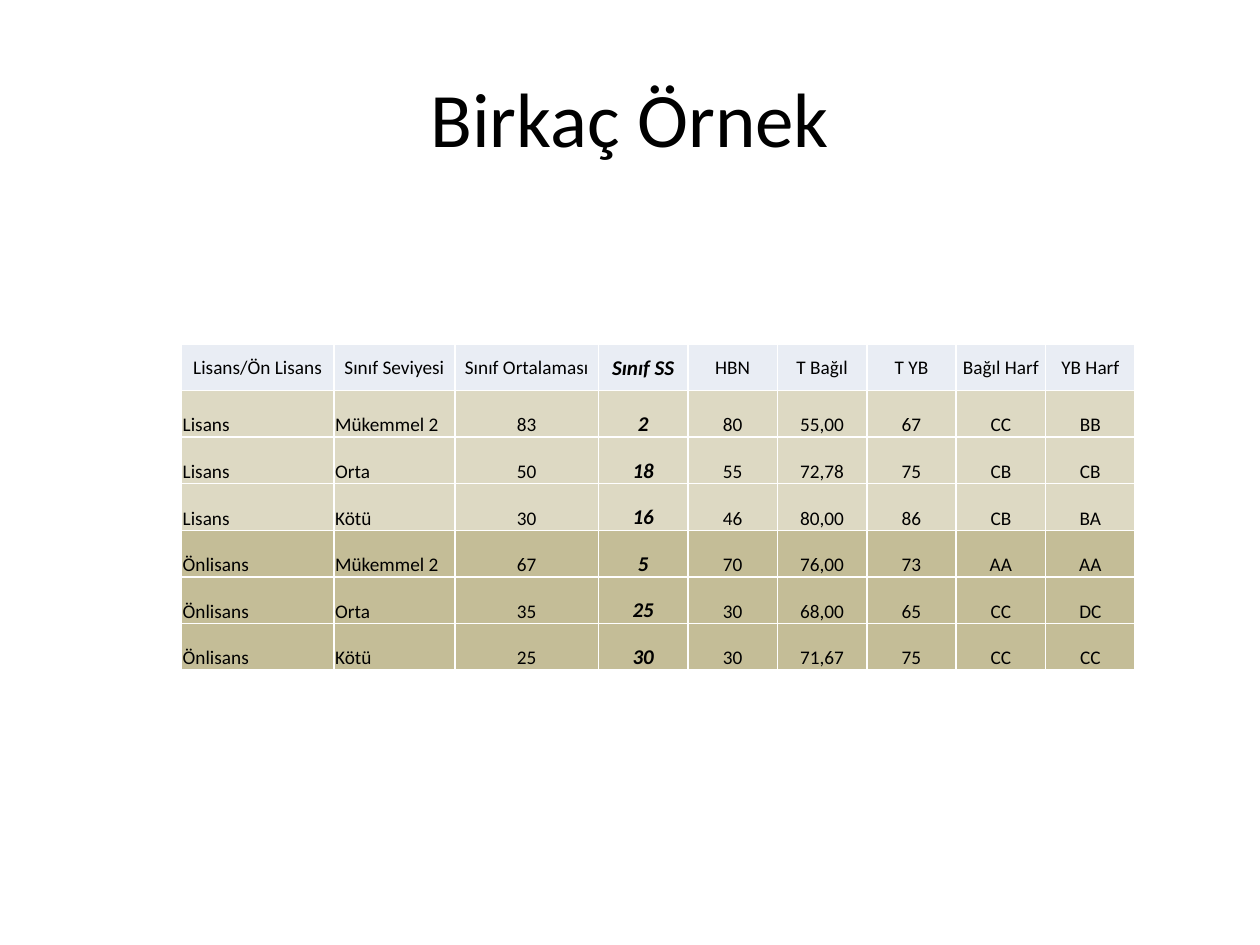
from lxml import etree
from pptx import Presentation
from pptx.dml.color import RGBColor
from pptx.enum.text import MSO_ANCHOR, PP_ALIGN
from pptx.oxml.ns import qn
from pptx.util import Inches, Pt

TITLE = "Birkaç Örnek"
HEADER = ["Lisans/Ön Lisans", "Sınıf Seviyesi", "Sınıf Ortalaması", "Sınıf SS",
          "HBN", "T Bağıl", "T YB", "Bağıl Harf", "YB Harf"]
ROWS = [
    ["Lisans", "Mükemmel 2", "83", "2", "80", "55,00", "67", "CC", "BB"],
    ["Lisans", "Orta", "50", "18", "55", "72,78", "75", "CB", "CB"],
    ["Lisans", "Kötü", "30", "16", "46", "80,00", "86", "CB", "BA"],
    ["Önlisans", "Mükemmel 2", "67", "5", "70", "76,00", "73", "AA", "AA"],
    ["Önlisans", "Orta", "35", "25", "30", "68,00", "65", "CC", "DC"],
    ["Önlisans", "Kötü", "25", "30", "30", "71,67", "75", "CC", "CC"],
]
COL_WIDTHS = [1.21, 0.96, 1.14] + [0.71] * 6
ROW_HEIGHT = 0.37
LABEL_COLS = 2
EMPHASIS_COL = HEADER.index("Sınıf SS")

FONT = "Calibri"
BLACK = RGBColor(0x00, 0x00, 0x00)
WHITE = RGBColor(0xFF, 0xFF, 0xFF)
HEADER_FILL = RGBColor(0xE9, 0xED, 0xF4)
LEVEL_FILLS = {"Lisans": RGBColor(0xDD, 0xD9, 0xC3),
               "Önlisans": RGBColor(0xC4, 0xBD, 0x97)}


def write(tf, text, size, align, emphasis=False):
    tf.text = text
    p = tf.paragraphs[0]
    p.alignment = align
    font = p.runs[0].font
    font.name, font.size = FONT, Pt(size)
    font.bold = font.italic = emphasis
    font.color.rgb = BLACK


def set_borders(cell, color, width):
    tcPr = cell._tc.get_or_add_tcPr()
    for side in ("lnL", "lnR", "lnT", "lnB"):
        ln = etree.SubElement(tcPr, qn(f"a:{side}"), w=str(Pt(width)))
        fill = etree.SubElement(ln, qn("a:solidFill"))
        etree.SubElement(fill, qn("a:srgbClr"), val=str(color))


def add_title(s):
    tf = s.shapes.add_textbox(Inches(0.5), Inches(0.3), Inches(9), Inches(1.25)).text_frame
    tf.word_wrap = True
    tf.vertical_anchor = MSO_ANCHOR.MIDDLE
    write(tf, TITLE, 44, PP_ALIGN.CENTER)


def add_grade_table(s):
    data = [HEADER] + ROWS
    table = s.shapes.add_table(
        len(data), len(HEADER), Inches(1.44), Inches(2.73),
        Inches(sum(COL_WIDTHS)), Inches(ROW_HEIGHT * len(data))).table
    for col, width in zip(table.columns, COL_WIDTHS):
        col.width = Inches(width)
    for i, values in enumerate(data):
        table.rows[i].height = Inches(ROW_HEIGHT)
        is_header = i == 0
        for j, value in enumerate(values):
            cell = table.cell(i, j)
            cell.margin_left = cell.margin_right = cell.margin_top = Inches(0.01)
            cell.margin_bottom = 0
            cell.vertical_anchor = MSO_ANCHOR.MIDDLE if is_header else MSO_ANCHOR.BOTTOM
            set_borders(cell, WHITE, 1)
            cell.fill.solid()
            cell.fill.fore_color.rgb = HEADER_FILL if is_header else LEVEL_FILLS[values[0]]
            is_label = not is_header and j < LABEL_COLS
            emphasis = j == EMPHASIS_COL
            write(cell.text_frame, value, 12 if emphasis else 11,
                  PP_ALIGN.LEFT if is_label else PP_ALIGN.CENTER, emphasis)


def main():
    prs = Presentation()
    prs.slide_width, prs.slide_height = Inches(10), Inches(7.5)
    s = prs.slides.add_slide(prs.slide_layouts[6])
    add_title(s)
    add_grade_table(s)
    prs.save("out.pptx")


if __name__ == "__main__":
    main()
